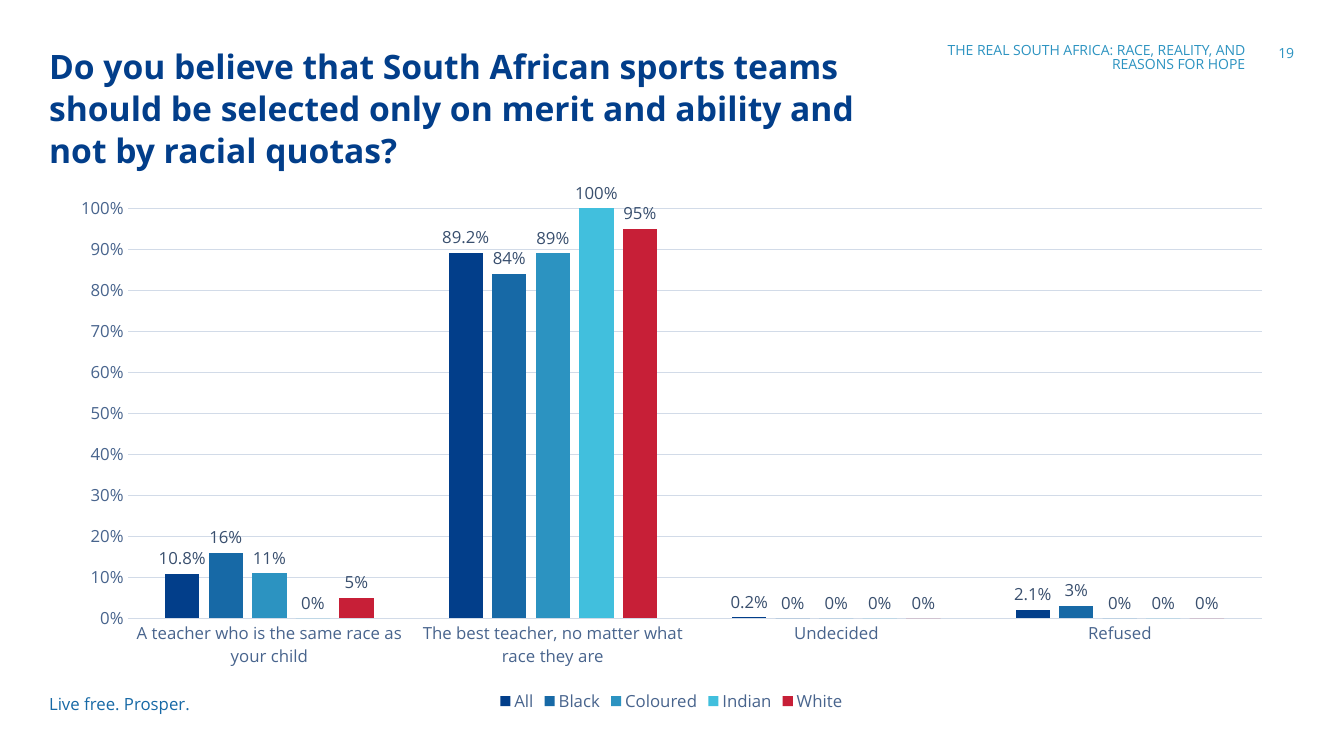
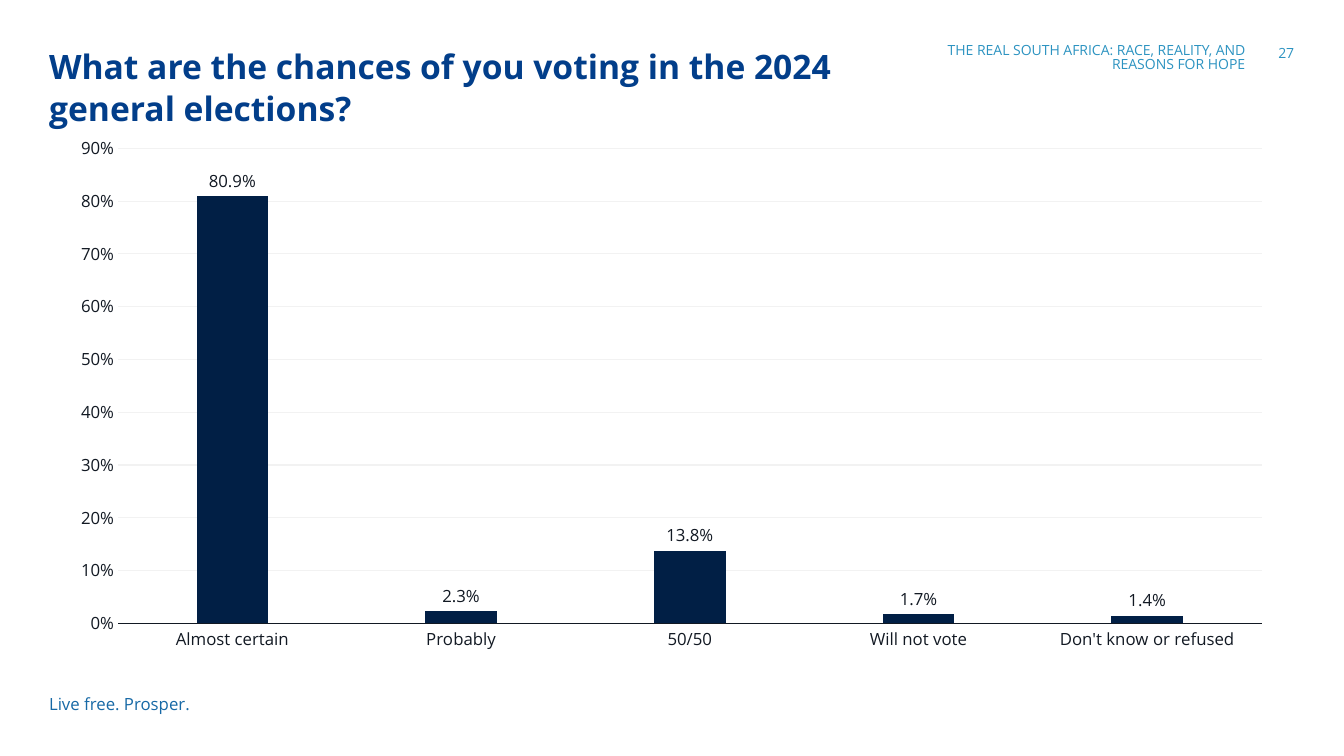
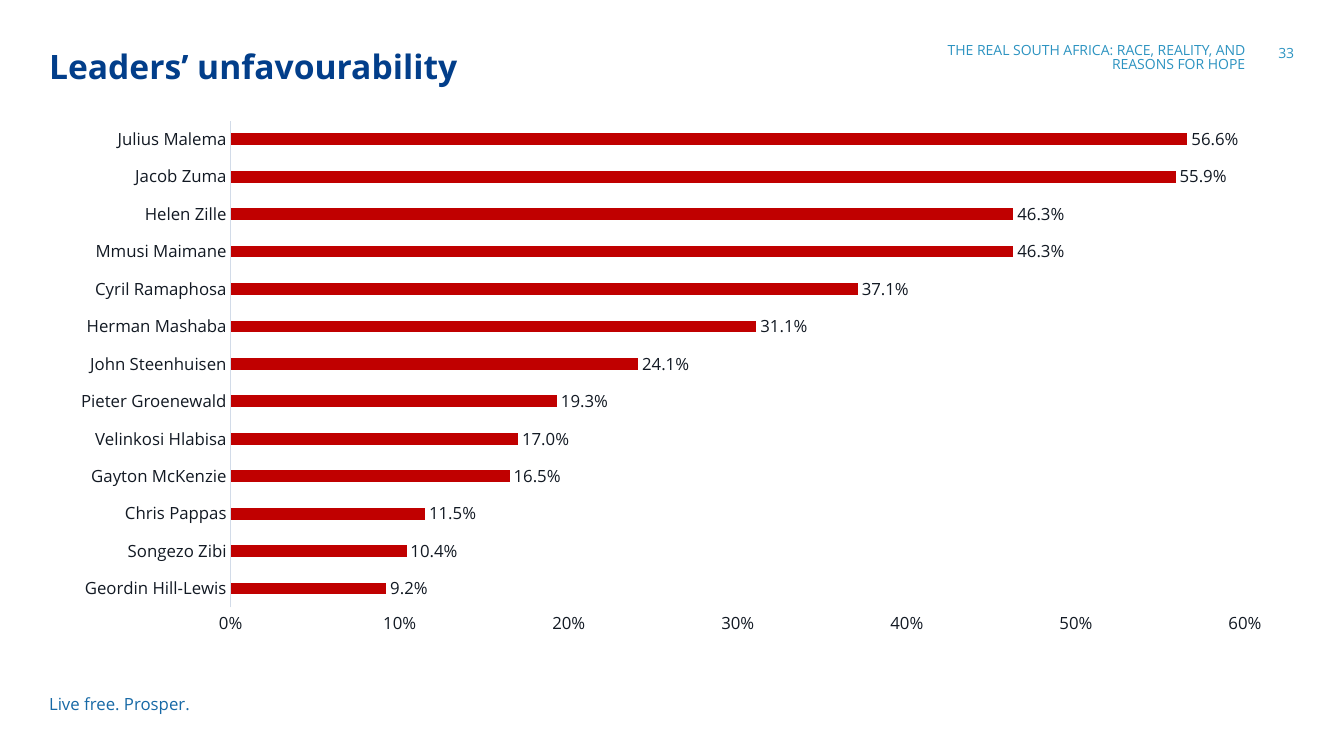
from pptx import Presentation
from pptx.chart.data import CategoryChartData
from pptx.dml.color import RGBColor
from pptx.enum.chart import XL_CHART_TYPE as ChartType
from pptx.enum.chart import XL_LABEL_POSITION as LabelPosition
from pptx.enum.chart import XL_LEGEND_POSITION as LegendPosition
from pptx.enum.chart import XL_TICK_MARK as TickMark
from pptx.enum.text import PP_ALIGN as Align
from pptx.util import Pt

FONT = "Open Sans"
NAVY, BLUE, SKY, CYAN, RED = "023E8A", "1769A6", "2C93C1", "41BFDD", "C71F37"
MIDNIGHT, CRIMSON, INK = "011F45", "C00000", "121923"
SLATE, DARK_SLATE, PALE, FAINT = "48648D", "394F6E", "D2DBE8", "F2F2F2"

REPORT = "THE REAL SOUTH AFRICA: RACE, REALITY, AND REASONS FOR HOPE"
SLOGAN = "Live free. Prosper."

SPORT_ANSWERS = [
    "A teacher who is the same race as your child",
    "The best teacher, no matter what race they are",
    "Undecided",
    "Refused",
]
SPORT_SERIES = [
    ("All", [0.108, 0.892, 0.002, 0.021], NAVY, "0.0%"),
    ("Black", [0.16, 0.84, 0, 0.03], BLUE, "0%"),
    ("Coloured", [0.11, 0.89, 0, 0], SKY, "0%"),
    ("Indian", [0, 1, 0, 0], CYAN, "0%"),
    ("White", [0.05, 0.95, 0, 0], RED, "0%"),
]
VOTING = {
    "Almost certain": 0.809,
    "Probably": 0.023,
    "50/50": 0.138,
    "Will not vote": 0.017,
    "Don't know or refused": 0.014,
}
UNFAVOURABILITY = {
    "Geordin Hill-Lewis": 0.092,
    "Songezo Zibi": 0.104,
    "Chris Pappas": 0.115,
    "Gayton McKenzie": 0.165,
    "Velinkosi Hlabisa": 0.17,
    "Pieter Groenewald": 0.193,
    "John Steenhuisen": 0.241,
    "Herman Mashaba": 0.311,
    "Cyril Ramaphosa": 0.371,
    "Mmusi Maimane": 0.463,
    "Helen Zille": 0.463,
    "Jacob Zuma": 0.559,
    "Julius Malema": 0.566,
}


def rgb(color):
    """Turn a hex string into a colour."""
    return RGBColor.from_string(color)


def style_font(font, size, color, bold=False):
    """Set the shared typeface with a size and colour."""
    font.name, font.size, font.bold = FONT, Pt(size), bold
    font.color.rgb = rgb(color)


def style_line(line, color):
    """Draw a thin line, or none when no colour is given."""
    if color:
        line.color.rgb = rgb(color)
        line.width = Pt(0.75)
    else:
        line.fill.background()


def add_text(slide, text, box, size, color, bold=False, align=Align.LEFT,
             spacing=None, wrap=True):
    """Add a one-paragraph text box."""
    frame = slide.shapes.add_textbox(*map(Pt, box)).text_frame
    frame.word_wrap = wrap
    paragraph = frame.paragraphs[0]
    paragraph.text = text
    paragraph.alignment = align
    paragraph.line_spacing = spacing
    style_font(paragraph.font, size, color, bold)


def add_page(presentation, title, number):
    """Add a slide with its title, report name, page number and slogan."""
    slide = presentation.slides.add_slide(presentation.slide_layouts[6])
    add_text(slide, SLOGAN, (28, 492, 122, 22), 12, BLUE, wrap=False)
    add_text(slide, str(number), (896.5, 28, 35, 29), 10, SKY, align=Align.RIGHT)
    add_text(slide, title, (28, 28, 630, 62), 24, NAVY, bold=True, spacing=Pt(30))
    add_text(slide, REPORT, (659, 28, 237.5, 45), 10, SKY, align=Align.RIGHT,
             spacing=0.85)
    return slide


def style_axis(axis, text_color, line_color):
    """Style an axis without tick marks or gridlines."""
    axis.major_tick_mark = axis.minor_tick_mark = TickMark.NONE
    axis.has_major_gridlines = False
    style_font(axis.tick_labels.font, 12, text_color)
    style_line(axis.format.line, line_color)


def add_bars(slide, kind, top, categories, series_rows, axis_color=INK,
             label_color=INK, base_color=PALE, grid_color=None):
    """Add a clustered bar or column chart of percentages."""
    data = CategoryChartData()
    data.categories = categories
    for name, values, _, number_format in series_rows:
        data.add_series(name, values, number_format)
    box = map(Pt, (40.3, top, 878.4, 382.3))
    chart = slide.shapes.add_chart(kind, *box, data).chart
    chart.has_title = chart.has_legend = False
    style_font(chart.font, 12, INK)

    style_axis(chart.category_axis, axis_color, base_color)
    value_axis = chart.value_axis
    style_axis(value_axis, axis_color, None)
    value_axis.tick_labels.number_format = "0%"
    value_axis.tick_labels.number_format_is_linked = False
    if grid_color:
        value_axis.has_major_gridlines = True
        style_line(value_axis.major_gridlines.format.line, grid_color)

    plot = chart.plots[0]
    plot.vary_by_categories = False
    plot.gap_width = 219
    if kind == ChartType.COLUMN_CLUSTERED:
        plot.overlap = -27
    for series, (_, _, color, number_format) in zip(plot.series, series_rows):
        series.format.fill.solid()
        series.format.fill.fore_color.rgb = rgb(color)
        labels = series.data_labels
        labels.show_value = True
        labels.position = LabelPosition.OUTSIDE_END
        labels.number_format = number_format
        labels.number_format_is_linked = False
        style_font(labels.font, 12, label_color)
    return chart


def add_legend(chart, color):
    """Put a legend below the plot."""
    chart.has_legend = True
    chart.legend.position = LegendPosition.BOTTOM
    chart.legend.include_in_layout = False
    style_font(chart.legend.font, 12, color)


def main():
    """Build the three survey slides."""
    presentation = Presentation()
    presentation.slide_width, presentation.slide_height = Pt(960), Pt(540)

    slide = add_page(presentation, "Do you believe that South African sports teams "
                     "should be selected only on merit and ability and not by "
                     "racial quotas?", 19)
    chart = add_bars(slide, ChartType.COLUMN_CLUSTERED, 129.6, SPORT_ANSWERS,
                     SPORT_SERIES, SLATE, DARK_SLATE, grid_color=PALE)
    chart.value_axis.maximum_scale = 1
    add_legend(chart, SLATE)

    slide = add_page(presentation, "What are the chances of you voting in the 2024 "
                     "general elections?", 27)
    add_bars(slide, ChartType.COLUMN_CLUSTERED, 90, VOTING.keys(),
             [("Series 1", VOTING.values(), MIDNIGHT, "0.0%")],
             base_color=INK, grid_color=FAINT)

    slide = add_page(presentation, "Leaders’ unfavourability", 33)
    add_bars(slide, ChartType.BAR_CLUSTERED, 78.5, UNFAVOURABILITY.keys(),
             [("Series 1", UNFAVOURABILITY.values(), CRIMSON, "0.0%")])

    presentation.save("out.pptx")


if __name__ == "__main__":
    main()
